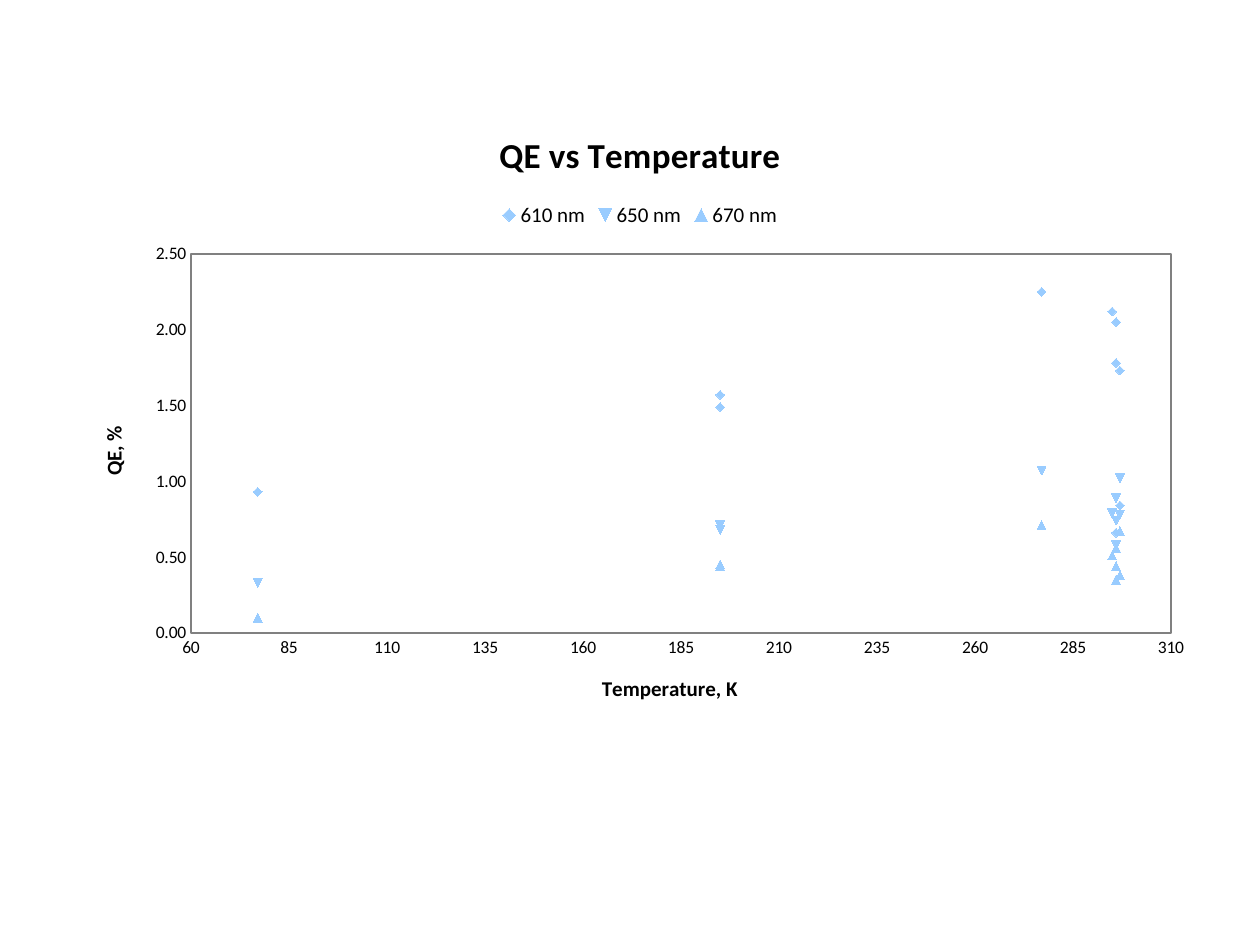
from lxml.etree import SubElement
from pptx import Presentation
from pptx.chart.data import XyChartData
from pptx.dml.color import RGBColor
from pptx.enum.chart import XL_CHART_TYPE, XL_LEGEND_POSITION, XL_TICK_LABEL_POSITION, XL_TICK_MARK
from pptx.oxml import parse_xml
from pptx.oxml.ns import nsdecls, qn
from pptx.util import Pt

PX = 914400 // 126
BLACK = RGBColor(0x00, 0x00, 0x00)
GRAY = RGBColor(0x80, 0x80, 0x80)
LIGHT_BLUE = RGBColor(0x99, 0xCC, 0xFF)
FONT_NAME = "Calibri"

CHART_BOX = (73, 105, 1134, 624)
PLOT_BOX = (191, 254, 980, 379)
TEMPERATURES = (295, 277, 296, 195, 296, 195, 297, 77, 297, 296)
EFFICIENCIES = {
    "610 nm": (2.12, 2.25, 2.05, 1.57, 1.78, 1.49, 1.73, 0.93, 0.84, 0.66),
    "650 nm": (0.79, 1.07, 0.89, 0.68, 0.74, 0.71, 1.02, 0.33, 0.78, 0.58),
    "670 nm": (0.51, 0.71, 0.56, 0.44, 0.44, 0.45, 0.67, 0.10, 0.38, 0.35),
}


def format_font(font, size, bold=False):
    font.name = FONT_NAME
    font.size = Pt(size)
    font.bold = bold
    font.color.rgb = BLACK


def set_title(owner, text, size):
    text_frame = owner.text_frame
    text_frame.text = text
    format_font(text_frame.paragraphs[0].font, size, bold=True)


def format_axis(axis, title, minimum, maximum, step, number_format):
    axis.minimum_scale, axis.maximum_scale = minimum, maximum
    axis.major_unit = step
    axis.has_major_gridlines = False
    axis.major_tick_mark = axis.minor_tick_mark = XL_TICK_MARK.NONE
    axis.tick_label_position = XL_TICK_LABEL_POSITION.NEXT_TO_AXIS
    axis.tick_labels.number_format = number_format
    axis.tick_labels.number_format_is_linked = False
    format_font(axis.tick_labels.font, 10)
    axis.format.line.color.rgb = GRAY
    axis.format.line.width = Pt(0.75)
    set_title(axis.axis_title, title, 12)


def place_plot(chart):
    plot_area = chart.plots[0]._element.getparent()
    for old_layout in plot_area.findall(qn("c:layout")):
        plot_area.remove(old_layout)
    layout = parse_xml(f"<c:layout {nsdecls('c')}/>")
    plot_area.insert(0, layout)
    manual = SubElement(layout, qn("c:manualLayout"))
    left, top, width, height = CHART_BOX
    plot_left, plot_top, plot_width, plot_height = PLOT_BOX
    settings = {
        "layoutTarget": "inner",
        "xMode": "edge",
        "yMode": "edge",
        "x": (plot_left - left) / width,
        "y": (plot_top - top) / height,
        "w": plot_width / width,
        "h": plot_height / height,
    }
    for name, value in settings.items():
        SubElement(manual, qn(f"c:{name}")).set("val", str(value))
    plot_area.append(parse_xml(
        f"<c:spPr {nsdecls('c', 'a')}><a:noFill/><a:ln w='9525'><a:solidFill>"
        f"<a:srgbClr val='{GRAY}'/></a:solidFill></a:ln></c:spPr>"
    ))


def add_scatter(slide):
    data = XyChartData()
    for name, values in EFFICIENCIES.items():
        series = data.add_series(name)
        for temperature, efficiency in zip(TEMPERATURES, values):
            series.add_data_point(temperature, efficiency)
    box = [length * PX for length in CHART_BOX]
    chart = slide.shapes.add_chart(XL_CHART_TYPE.XY_SCATTER, *box, data).chart
    format_font(chart.font, 10)
    chart.has_title = True
    set_title(chart.chart_title, "QE vs Temperature", 20)
    chart.has_legend = True
    chart.legend.position = XL_LEGEND_POSITION.TOP
    chart.legend.include_in_layout = False
    format_font(chart.legend.font, 12)
    chart.plots[0].vary_by_categories = False
    for series in chart.plots[0].series:
        series.smooth = False
        series.format.line.fill.background()
        series.marker.format.fill.solid()
        series.marker.format.fill.fore_color.rgb = LIGHT_BLUE
    format_axis(chart.category_axis, "Temperature, K", 60, 310, 25, "0")
    format_axis(chart.value_axis, "QE, %", 0, 2.5, 0.5, "0.00")
    place_plot(chart)


def main():
    presentation = Presentation()
    presentation.slide_width = 1260 * PX
    presentation.slide_height = 945 * PX
    slide = presentation.slides.add_slide(presentation.slide_layouts[6])
    add_scatter(slide)
    presentation.save("out.pptx")


if __name__ == "__main__":
    main()
